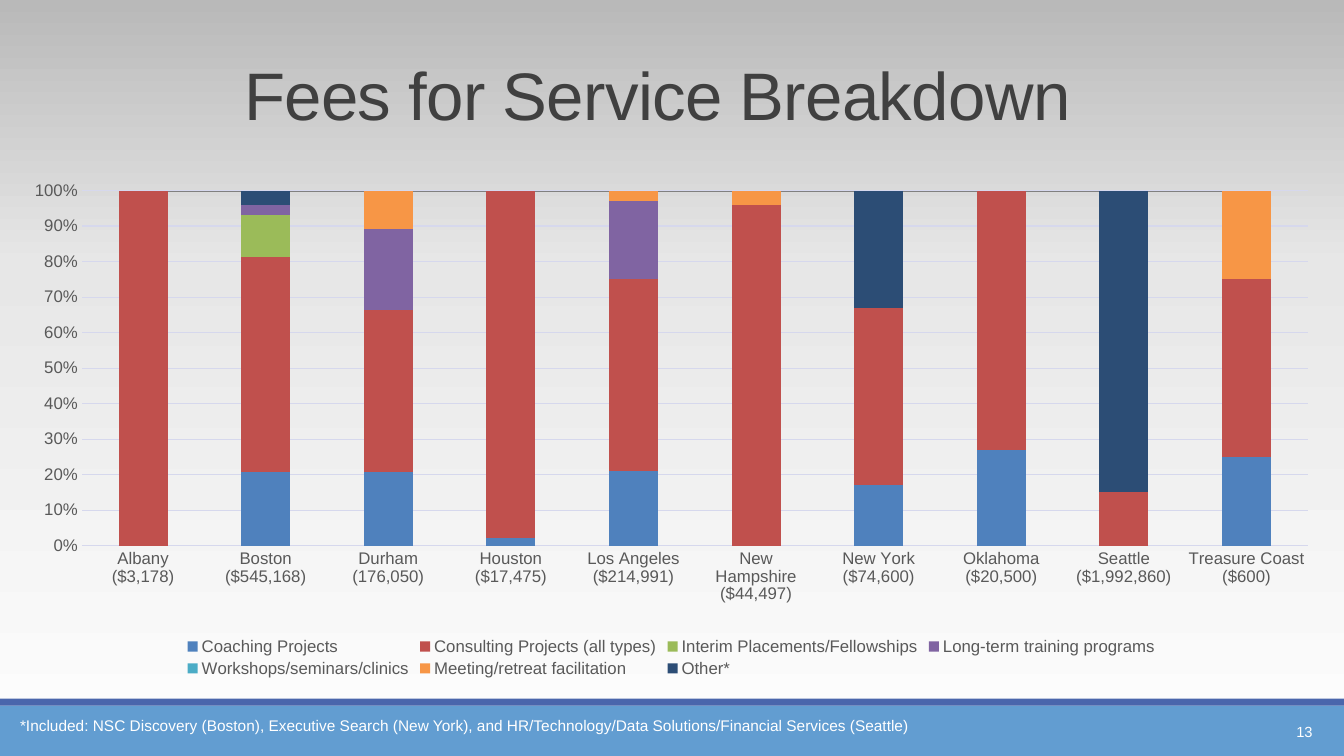
"""Build the slide on the breakdown of fees for service."""
import copy

import lxml.etree
import pptx
import pptx.chart.data
import pptx.dml.color
import pptx.enum.chart
import pptx.enum.shapes
import pptx.enum.text
import pptx.oxml
import pptx.oxml.ns
import pptx.util

Pt = pptx.util.Pt
qn = pptx.oxml.ns.qn
ALIGN = pptx.enum.text.PP_ALIGN
ANCHOR = pptx.enum.text.MSO_ANCHOR

COLORS = {
    "title": "404040", "label": "595959", "white": "FFFFFF", "rule": "808080",
    "grid": "D6D8ED", "footer": "629DD1", "stripe": "4A66AC",
}
BACKGROUND_STOPS = [(0, "FEFEFE"), (0.65, "E7E7E7"), (1, "B9B9B9")]
CITIES = [
    "Albany\n($3,178)", "Boston\n($545,168)", "Durham\n(176,050)", "Houston\n($17,475)",
    "Los Angeles\n($214,991)", "New Hampshire\n($44,497)", "New York\n($74,600)",
    "Oklahoma\n($20,500)", "Seattle\n($1,992,860)", "Treasure Coast\n($600)",
]
SERVICES = [
    ("Coaching Projects", "4F81BD", [0, 21, 21, 2, 21, 0, 17, 27, 0, 25]),
    ("Consulting Projects (all types)", "C0504D", [100, 61, 46, 98, 54, 96, 50, 73, 15, 50]),
    ("Interim Placements/Fellowships", "9BBB59", [0, 12, 0, 0, 0, 0, 0, 0, 0, 0]),
    ("Long-term training programs", "8064A2", [0, 3, 23, 0, 22, 0, 0, 0, 0, 0]),
    ("Workshops/seminars/clinics", "4BACC6", [0] * 10),
    ("Meeting/retreat facilitation", "F79646", [0, 0, 11, 0, 3, 4, 0, 0, 0, 25]),
    ("Other*", "2C4D75", [0, 4, 0, 0, 0, 0, 33, 0, 85, 0]),
]
PLOT_AREA = {"x": 0.048, "y": 0.034, "w": 0.94, "h": 0.699}


def rgb(color):
    """Return the color object for a hex string."""
    return pptx.dml.color.RGBColor.from_string(color)


class SlideBuilder:
    """Hold the style and the current slide."""

    def __init__(self, slide, font_name="Arial"):
        """Keep the slide and the font."""
        self.slide = slide
        self.font_name = font_name

    def style_font(self, font, size, color):
        """Set name, size and color of a font."""
        font.name, font.size, font.bold = self.font_name, Pt(size), False
        font.color.rgb = rgb(color)

    def background(self, stops):
        """Fill the background with a gradient that rises from the bottom."""
        fill = self.slide.background.fill
        fill.gradient()
        fill.gradient_angle = 90
        first = self.slide.background._cSld.find(".//" + qn("a:gs"))
        first.addnext(copy.deepcopy(first))
        for stop, (position, color) in zip(fill.gradient_stops, stops):
            stop.position = position
            stop.color.rgb = rgb(color)

    def title(self, text, left, top, width, height):
        """Move and format the title placeholder."""
        shape = self.slide.shapes.title
        shape.left, shape.top, shape.width, shape.height = map(Pt, (left, top, width, height))
        shape.text_frame.text = text
        shape.text_frame.vertical_anchor = ANCHOR.BOTTOM
        paragraph = shape.text_frame.paragraphs[0]
        paragraph.alignment = ALIGN.CENTER
        paragraph.line_spacing = 0.85
        self.style_font(paragraph.font, 48, COLORS["title"])
        paragraph.runs[0].font._element.set("spc", "-50")

    def band(self, top, height, color):
        """Add a plain band across the whole slide."""
        shape = self.slide.shapes.add_shape(
            pptx.enum.shapes.MSO_SHAPE.RECTANGLE, 0, Pt(top), Pt(960), Pt(height))
        shape.shadow.inherit = False
        shape.fill.solid()
        shape.fill.fore_color.rgb = rgb(color)
        shape.line.fill.background()

    def rule(self, left, right, top, color):
        """Add a thin horizontal line."""
        line = self.slide.shapes.add_connector(
            pptx.enum.shapes.MSO_CONNECTOR.STRAIGHT, Pt(left), Pt(top), Pt(right), Pt(top))
        line.line.width = Pt(0.5)
        line.line.color.rgb = rgb(color)
        lxml.etree.SubElement(line._element.spPr, qn("a:effectLst"))

    def text(self, text, left, top, width, height, size, alignment, anchor):
        """Add a white line of text."""
        box = self.slide.shapes.add_textbox(Pt(left), Pt(top), Pt(width), Pt(height))
        box.text_frame.word_wrap = True
        box.text_frame.vertical_anchor = anchor
        paragraph = box.text_frame.paragraphs[0]
        paragraph.text = text
        paragraph.alignment = alignment
        self.style_font(paragraph.font, size, COLORS["white"])

    def axis(self, axis, line):
        """Format an axis: no tick marks, gray labels, given line."""
        axis.major_tick_mark = axis.minor_tick_mark = pptx.enum.chart.XL_TICK_MARK.NONE
        self.style_font(axis.tick_labels.font, 12, COLORS["label"])
        if line:
            self.grid_line(axis.format.line)
        else:
            axis.format.line.fill.background()

    def grid_line(self, line):
        """Format a line of the chart grid."""
        line.width = Pt(0.75)
        line.color.rgb = rgb(COLORS["grid"])

    def chart(self, categories, services, left, top, width, height):
        """Add the stacked column chart of shares per city."""
        data = pptx.chart.data.CategoryChartData()
        data.categories = categories
        for name, _, values in services:
            data.add_series(name, values)
        chart = self.slide.shapes.add_chart(
            pptx.enum.chart.XL_CHART_TYPE.COLUMN_STACKED_100,
            Pt(left), Pt(top), Pt(width), Pt(height), data).chart
        self.style_font(chart.font, 12, COLORS["label"])
        chart.has_title = False
        chart.has_legend = True
        chart.legend.position = pptx.enum.chart.XL_LEGEND_POSITION.BOTTOM
        chart.legend.include_in_layout = False
        self.style_font(chart.legend.font, 12, COLORS["label"])

        plot = chart.plots[0]
        plot.gap_width, plot.overlap, plot.vary_by_categories = 150, 100, False
        for series, (_, color, _) in zip(plot.series, services):
            series.format.fill.solid()
            series.format.fill.fore_color.rgb = rgb(color)

        self.axis(chart.category_axis, line=True)
        value_axis = chart.value_axis
        self.axis(value_axis, line=False)
        value_axis.minimum_scale, value_axis.maximum_scale, value_axis.major_unit = 0, 1, 0.1
        value_axis.tick_labels.number_format = "0%"
        value_axis.tick_labels.number_format_is_linked = False
        value_axis.has_major_gridlines = True
        self.grid_line(value_axis.major_gridlines.format.line)
        self.place_plot(chart)

    def place_plot(self, chart):
        """Fix the inner plot area as fractions of the chart."""
        plot_area = chart._chartSpace.find(".//" + qn("c:plotArea"))
        for old_layout in plot_area.findall(qn("c:layout")):
            plot_area.remove(old_layout)
        layout = lxml.etree.Element(qn("c:layout"))
        manual = lxml.etree.SubElement(layout, qn("c:manualLayout"))
        settings = {"layoutTarget": "inner", "xMode": "edge", "yMode": "edge", **PLOT_AREA}
        for name, value in settings.items():
            lxml.etree.SubElement(manual, qn("c:" + name)).set("val", str(value))
        plot_area.insert(0, layout)


def main():
    """Build and save the presentation."""
    presentation = pptx.Presentation()
    presentation.slide_width, presentation.slide_height = Pt(960), Pt(540)
    slide = presentation.slides.add_slide(presentation.slide_layouts[5])
    builder = SlideBuilder(slide)
    builder.background(BACKGROUND_STOPS)
    builder.band(504, 36, COLORS["footer"])
    builder.band(499, 5, COLORS["stripe"])
    builder.rule(94.3, 879.1, 136.8, COLORS["rule"])
    builder.title("Fees for Service Breakdown", 97.2, 11.5, 744.5, 87.8)
    builder.text("13", 841.7, 508.3, 103, 28.8, 10.5, ALIGN.RIGHT, ANCHOR.MIDDLE)
    builder.chart(CITIES, SERVICES, 13.7, 123.8, 931.7, 362.9)
    builder.text(
        "*Included: NSC Discovery (Boston), Executive Search (New York), "
        "and HR/Technology/Data Solutions/Financial Services (Seattle)",
        7.2, 508.3, 826.6, 20.9, 11, ALIGN.LEFT, ANCHOR.TOP)
    presentation.save("out.pptx")


if __name__ == "__main__":
    main()
